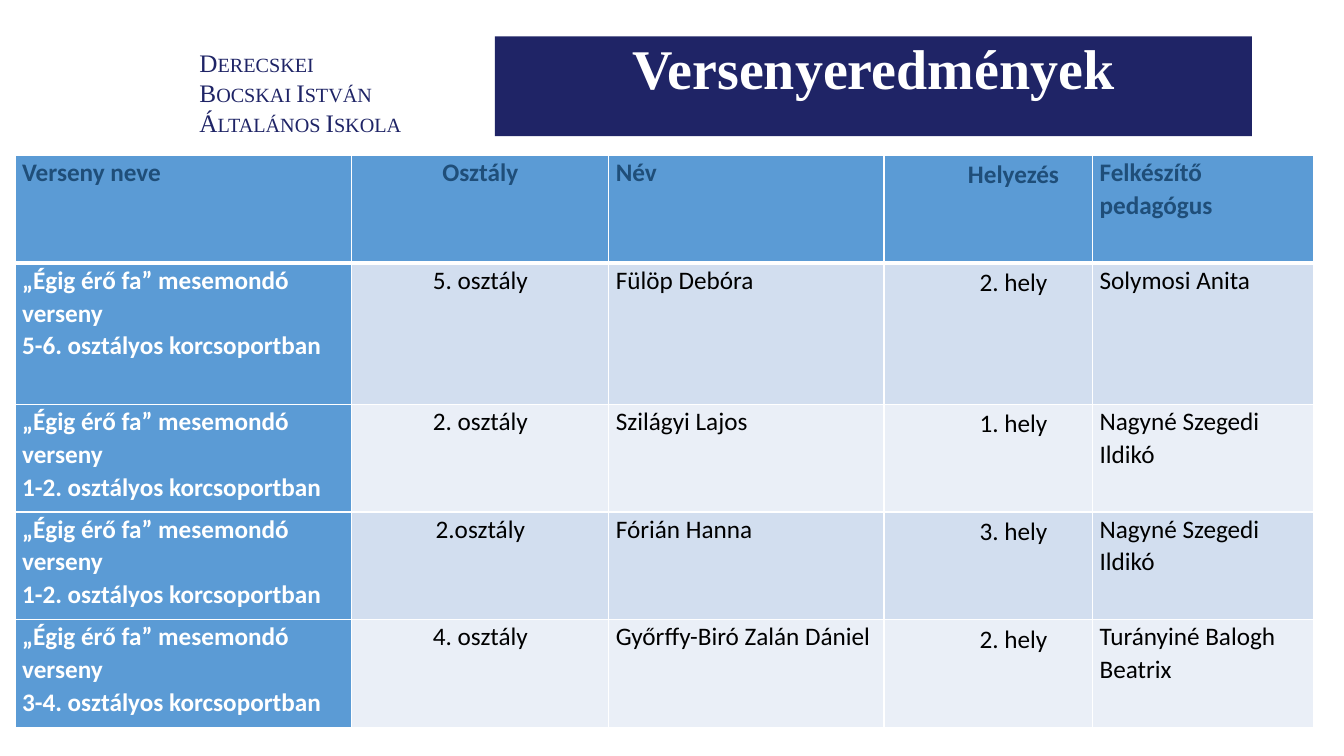
"""Build the school competition results slide with its title bar and table."""
from lxml.etree import SubElement
from pptx import Presentation
from pptx.dml.color import RGBColor
from pptx.enum.shapes import MSO_SHAPE as Shape
from pptx.enum.text import MSO_ANCHOR as Anchor, PP_ALIGN as Align
from pptx.oxml.ns import qn
from pptx.util import Pt

NAVY = RGBColor(0x1F, 0x24, 0x66)
WHITE = RGBColor(0xFF, 0xFF, 0xFF)
BLACK = RGBColor(0, 0, 0)
BLUE = RGBColor(0x5B, 0x9B, 0xD5)
HEADER_TEXT = RGBColor(0x1F, 0x4E, 0x79)
BANDS = [RGBColor(0xEA, 0xEF, 0xF7), RGBColor(0xD2, 0xDE, 0xEF)]

COLUMN_WIDTHS = [240.5, 183.6, 196.6, 149, 157.7]
ROW_HEIGHTS = [77, 100.8, 77, 77, 77]
CONTEST = "„Égig érő fa” mesemondó verseny\n{} osztályos korcsoportban"
ROWS = [
    ["Verseny neve", "Osztály", "Név", "Helyezés", "Felkészítő pedagógus"],
    [CONTEST.format("5-6."), "5. osztály", "Fülöp Debóra", "2. hely", "Solymosi Anita"],
    [CONTEST.format("1-2."), "2. osztály", "Szilágyi Lajos", "1. hely", "Nagyné Szegedi Ildikó"],
    [CONTEST.format("1-2."), "2.osztály", "Fórián Hanna", "3. hely", "Nagyné Szegedi Ildikó"],
    [CONTEST.format("3-4."), "4. osztály", "Győrffy-Biró Zalán Dániel", "2. hely",
     "Turányiné Balogh Beatrix"],
]
CENTERED_COLUMNS = (1, 3)
PLACE_COLUMN = 3


def format_runs(paragraph, color, **values):
    """Apply font values and a colour to every run of a paragraph."""
    for run in paragraph.runs:
        for name, value in values.items():
            setattr(run.font, name, value)
        run.font.color.rgb = color


def add_border(cell, side, width):
    """Add a white border line to one side of a cell."""
    line = SubElement(cell._tc.get_or_add_tcPr(), qn(f"a:ln{side}"), w=str(Pt(width)))
    fill = SubElement(line, qn("a:solidFill"))
    SubElement(fill, qn("a:srgbClr"), val=str(WHITE))


presentation = Presentation()
presentation.slide_width = Pt(960)
presentation.slide_height = Pt(540)
slide = presentation.slides.add_slide(presentation.slide_layouts[6])

school = slide.shapes.add_textbox(Pt(135.4), Pt(30.2), Pt(480), Pt(94.3))
school.text_frame.word_wrap = True
paragraph = school.text_frame.paragraphs[0]
paragraph.text = "Derecskei\vBocskai István\vÁltalános Iskola"
format_runs(paragraph, NAVY, size=Pt(18), name="Times New Roman")
for run in paragraph.runs:
    run._r.get_or_add_rPr().set("cap", "small")

title = slide.shapes.add_shape(Shape.RECTANGLE, Pt(353.5), Pt(25.9), Pt(540.7), Pt(71.3))
title.shadow.inherit = False
title.fill.solid()
title.fill.fore_color.rgb = NAVY
title.line.fill.background()
title.text_frame.word_wrap = True
title.text_frame.vertical_anchor = Anchor.TOP
paragraph = title.text_frame.paragraphs[0]
paragraph.text = "Versenyeredmények"
for name, value in {"alignment": Align.CENTER, "line_spacing": 0.9,
                    "space_before": Pt(10)}.items():
    setattr(paragraph, name, value)
format_runs(paragraph, WHITE, size=Pt(40), name="Times New Roman", bold=True)

table = slide.shapes.add_table(len(ROWS), len(COLUMN_WIDTHS), Pt(10.8), Pt(110.9),
                               Pt(sum(COLUMN_WIDTHS)), Pt(sum(ROW_HEIGHTS))).table
table.first_col = True
for column, width in zip(table.columns, COLUMN_WIDTHS):
    column.width = Pt(width)
for row, height in zip(table.rows, ROW_HEIGHTS):
    row.height = Pt(height)

CELL_MARGINS = {"margin_left": Pt(5), "margin_right": Pt(5),
                "margin_top": 0, "margin_bottom": 0}
for row_index, texts in enumerate(ROWS):
    for column_index, text in enumerate(texts):
        cell = table.cell(row_index, column_index)
        is_header = row_index == 0
        is_strong = is_header or column_index == 0
        is_place = column_index == PLACE_COLUMN
        for name, value in CELL_MARGINS.items():
            setattr(cell, name, value)
        borders = {"L": 1, "R": 1, "T": 3 if row_index == 1 else 1, "B": 3 if is_header else 1}
        for side, width in borders.items():
            add_border(cell, side, width)
        cell.fill.solid()
        cell.fill.fore_color.rgb = BLUE if is_strong else BANDS[row_index % 2]
        color = HEADER_TEXT if is_header else WHITE if is_strong else BLACK
        cell.text_frame.text = text
        for paragraph in cell.text_frame.paragraphs:
            paragraph.alignment = Align.CENTER if column_index in CENTERED_COLUMNS else Align.LEFT
            paragraph.line_spacing = 1.15 if is_place else 1.07
            if is_place:
                paragraph._p.get_or_add_pPr().set("marL", str(Pt(36)))
            format_runs(paragraph, color, size=Pt(18), name="Calibri", bold=is_strong)

presentation.save("out.pptx")
